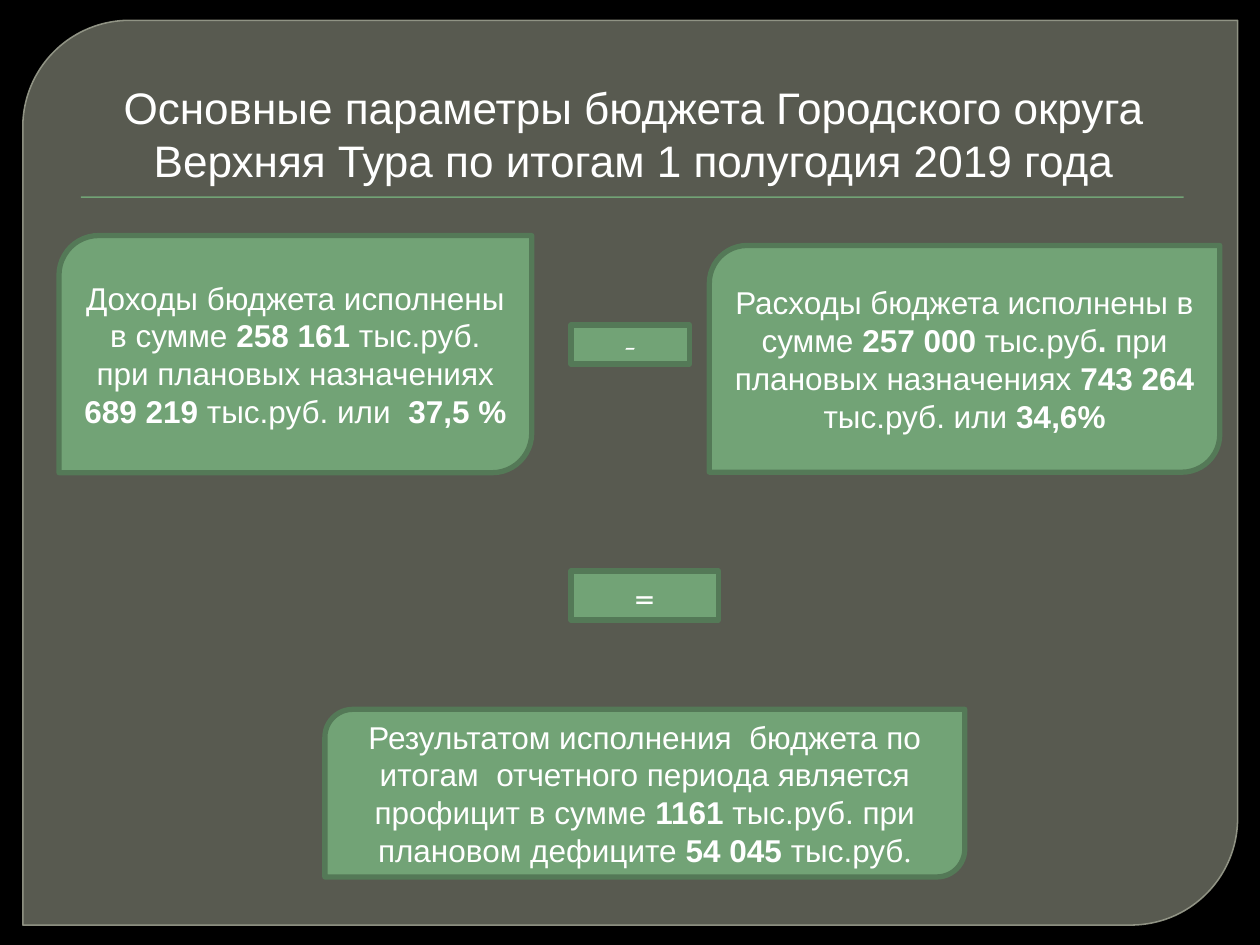
import pptx
import pptx.util
import pptx.dml.color
import pptx.enum.shapes
import pptx.enum.text
import pptx.oxml
import pptx.oxml.ns

Cm, Pt = pptx.util.Cm, pptx.util.Pt
RGB = pptx.dml.color.RGBColor.from_string
Kind = pptx.enum.shapes.MSO_SHAPE
Anchor = pptx.enum.text.MSO_ANCHOR
HUES = {"back": "000000", "panel": "888B7B", "edge": "9DA090",
        "green": "72A376", "dark": "547957", "text": "FFFFFF"}


def write(shape, text, size=18, font="Arial", anchor=Anchor.MIDDLE, dot=None):
    """Write centred text; parts between asterisks are bold, dot is the font of a final full stop."""
    frame = shape.text_frame
    frame.word_wrap = True
    frame.vertical_anchor = anchor
    para = frame.paragraphs[0]
    para.alignment = pptx.enum.text.PP_ALIGN.CENTER
    parts = [(part, i % 2 == 1, font) for i, part in enumerate(text.split("*"))]
    if dot:
        parts.append((".", False, dot))
    for part, bold, face in parts:
        if part:
            run = para.add_run()
            run.text = part
            run.font.size = Pt(size)
            run.font.bold = bold
            run.font.name = face
            run.font.color.rgb = RGB(HUES["text"])
    return para


def draw(kind, place, fill, line=None, width=3):
    shape = slide.shapes.add_shape(kind, *[Cm(n) for n in place])
    shape.shadow.inherit = False
    shape.fill.solid()
    shape.fill.fore_color.rgb = RGB(HUES[fill])
    if line:
        shape.line.color.rgb = RGB(HUES[line])
        shape.line.width = Pt(width)
    else:
        shape.line.fill.background()
    return shape


deck = pptx.Presentation()
deck.slide_width, deck.slide_height = Cm(25.4), Cm(19.05)
slide = deck.slides.add_slide(deck.slide_layouts[6])
slide.background.fill.solid()
slide.background.fill.fore_color.rgb = RGB(HUES["back"])

# Translucent panel with two rounded corners
panel = draw(Kind.ROUND_2_DIAG_RECTANGLE, (0.46, 0.41, 24.49, 18.24), "panel", "edge", 0.87)
panel.adjustments[0] = 0.118
tints = panel.element.spPr.iter(pptx.oxml.ns.qn("a:srgbClr"))
for tint, alpha in zip(list(tints), (65000, 88000)):
    tint.append(pptx.oxml.parse_xml(
        f'<a:alpha {pptx.oxml.ns.nsdecls("a")} val="{alpha}"/>'))

# Title and the rule under it
draw(Kind.RECTANGLE, (1.63, 3.96, 22.23, 0.03), "green")
title = slide.shapes.add_textbox(Cm(1.27), Cm(0.71), Cm(22.86), Cm(3.18))
para = write(title, "Основные параметры бюджета Городского округа Верхняя Тура "
             "по итогам 1 полугодия 2019 года", size=25.2, anchor=Anchor.BOTTOM)
para._p.get_or_add_pPr().set("marL", str(Cm(0.15)))

# Signs between the boxes
for sign, wide, top, high in (("-", 2.39, 6.55, 0.79), ("=", 2.97, 11.51, 0.99)):
    box = draw(Kind.RECTANGLE, (11.51, top, wide, high), "green", "dark")
    write(box, sign, font="TeX Gyre Bonum")

# Income, spending and result
boxes = [
    ((1.19, 4.75, 9.53, 4.78), None,
     "Доходы бюджета исполнены в сумме *258 161 *тыс.руб. при плановых "
     "назначениях *689 219 *тыс.руб. или  *37,5 %*"),
    ((14.3, 4.95, 10.29, 4.57), None,
     "Расходы бюджета исполнены в сумме *257 000 *тыс.руб*. *при плановых "
     "назначениях *743 264 *тыс.руб. или *34,6%*"),
    ((6.55, 14.3, 12.9, 3.38), "Times New Roman",
     "Результатом исполнения  бюджета по итогам  отчетного периода является "
     "профицит в сумме *1161 *тыс.руб. при плановом дефиците *54 045 *тыс.руб"),
]
for place, dot, text in boxes:
    box = draw(Kind.ROUND_2_DIAG_RECTANGLE, place, "green", "dark")
    write(box, text, dot=dot)

deck.save("out.pptx")
